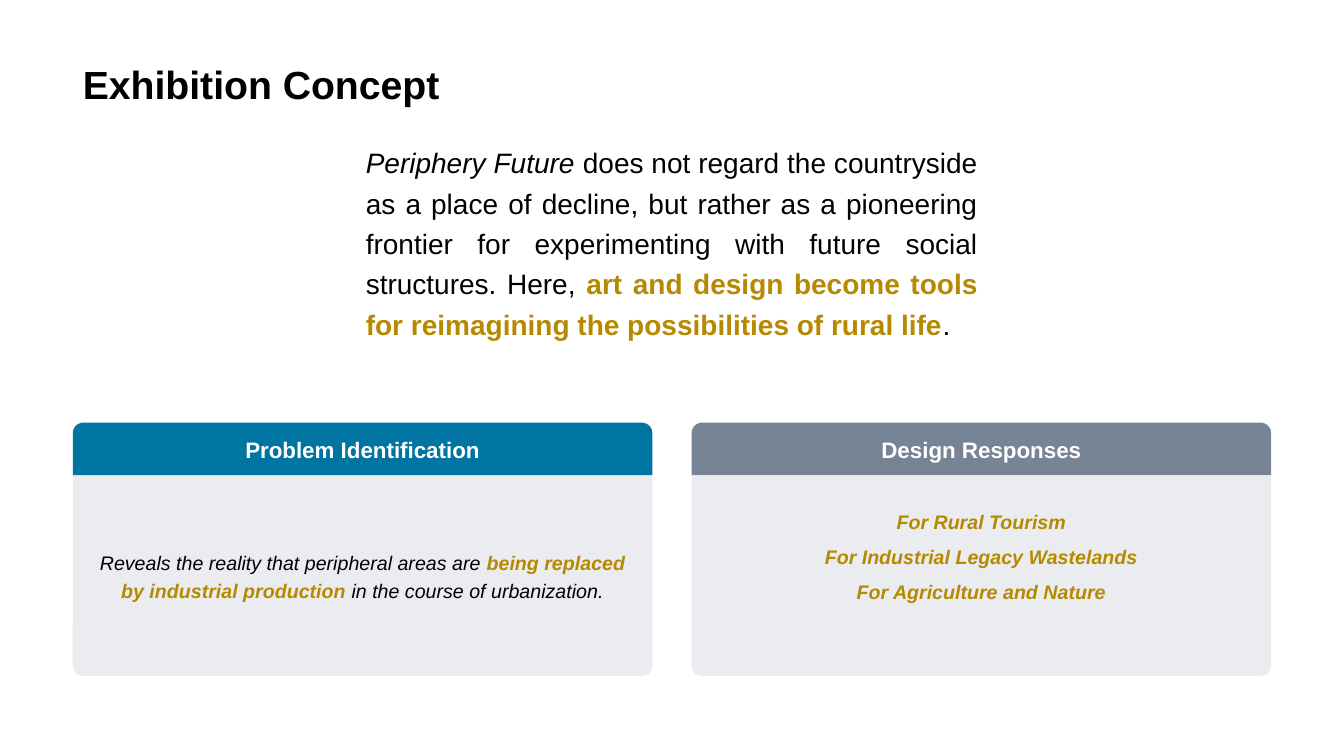
from lxml import etree
from pptx import Presentation
from pptx.dml.color import RGBColor
from pptx.enum.shapes import MSO_SHAPE
from pptx.enum.text import MSO_ANCHOR, MSO_AUTO_SIZE, PP_ALIGN
from pptx.oxml.ns import qn
from pptx.util import Pt

ROUND = MSO_SHAPE.ROUND_2_SAME_RECTANGLE
LEFT, CENTER, JUSTIFY = PP_ALIGN.LEFT, PP_ALIGN.CENTER, PP_ALIGN.JUSTIFY
MIDDLE, BOTTOM = MSO_ANCHOR.MIDDLE, MSO_ANCHOR.BOTTOM
FONT = "Arial"
COLORS = {
    "black": "000000",
    "white": "FFFFFF",
    "gold": "B68900",
    "blue": "0075A1",
    "slate": "778495",
}
CARD_TOP, CARD_WIDTH = 301.9, 414
HEAD_HEIGHT, BODY_HEIGHT = 37.6, 143.3


def color(name):
    return RGBColor.from_string(COLORS[name])


def write(par, parts, size, align, spacing=1.0):
    """Fill a paragraph with (text, color, style) parts; style holds b and i."""
    par.alignment = align
    par.line_spacing = spacing
    for text, tint, style in parts:
        run = par.add_run()
        run.text = text
        font = run.font
        font.name, font.size = FONT, Pt(size)
        font.bold, font.italic = "b" in style, "i" in style
        font.color.rgb = color(tint)


def add_title(slide, text):
    title = slide.shapes.title
    title.left, title.top = Pt(52), Pt(0)
    title.width, title.height = Pt(855), Pt(80.6)
    frame = title.text_frame
    frame.auto_size = MSO_AUTO_SIZE.NONE
    frame.vertical_anchor = BOTTOM
    write(frame.paragraphs[0], [(text, "black", "b")], 28, LEFT)


def add_intro(slide, parts):
    box = slide.shapes.add_textbox(Pt(254.2), Pt(95.8), Pt(451.4), Pt(149.8))
    frame = box.text_frame
    frame.word_wrap = True
    write(frame.paragraphs[0], parts, 20, JUSTIFY, 1.2)


def add_panel(slide, left, top, height, fill, corners, alpha=100):
    """Add a card half; corners are the top and bottom rounding."""
    panel = slide.shapes.add_shape(
        ROUND, Pt(left), Pt(top), Pt(CARD_WIDTH), Pt(height))
    panel.shadow.inherit = False
    panel.line.fill.background()
    panel.fill.solid()
    panel.fill.fore_color.rgb = color(fill)
    for i, corner in enumerate(corners):
        panel.adjustments[i] = corner
    if alpha < 100:
        tint = panel.fill._xPr.find(qn("a:solidFill"))[0]
        etree.SubElement(tint, qn("a:alpha")).set("val", str(alpha * 1000))
    return panel.text_frame


def add_card(slide, left, fill, head, lines, spacing, bottom):
    body = add_panel(slide, left, CARD_TOP + HEAD_HEIGHT, BODY_HEIGHT,
                     "slate", (0, 0.05), 15)
    body.word_wrap = True
    body.vertical_anchor = MIDDLE
    body.margin_bottom = Pt(bottom)
    for i, parts in enumerate(lines):
        par = body.add_paragraph() if i else body.paragraphs[0]
        write(par, parts, 14, CENTER, spacing)

    top = add_panel(slide, left, CARD_TOP, HEAD_HEIGHT, fill, (0.2, 0))
    top.word_wrap = False
    top.vertical_anchor = BOTTOM
    top.margin_top = top.margin_bottom = Pt(8.64)
    write(top.paragraphs[0], [(head, "white", "b")], 16, CENTER, 0.9)


def main():
    deck = Presentation()
    deck.slide_width, deck.slide_height = Pt(960), Pt(540)
    slide = deck.slides.add_slide(deck.slide_layouts[5])

    add_title(slide, "Exhibition Concept")
    add_intro(slide, [
        ("Periphery Future ", "black", "i"),
        ("does not regard the countryside as a place of decline, but rather "
         "as a pioneering frontier for experimenting with future social "
         "structures. Here, ", "black", ""),
        ("art and design become tools for reimagining the possibilities of "
         "rural life", "gold", "b"),
        (".", "black", ""),
    ])

    problem = [
        ("Reveals the reality that peripheral areas are ", "black", "i"),
        ("being replaced by industrial production ", "gold", "bi"),
        ("in the course of urbanization.", "black", "i"),
    ]
    add_card(slide, 52, "blue", "Problem Identification", [problem], 1.2, 3.6)

    aims = ("For Rural Tourism", "For Industrial Legacy Wastelands",
            "For Agriculture and Nature")
    add_card(slide, 494, "slate", "Design Responses",
             [[(aim, "gold", "bi")] for aim in aims], 1.5, 37)

    deck.save("out.pptx")


if __name__ == "__main__":
    main()
